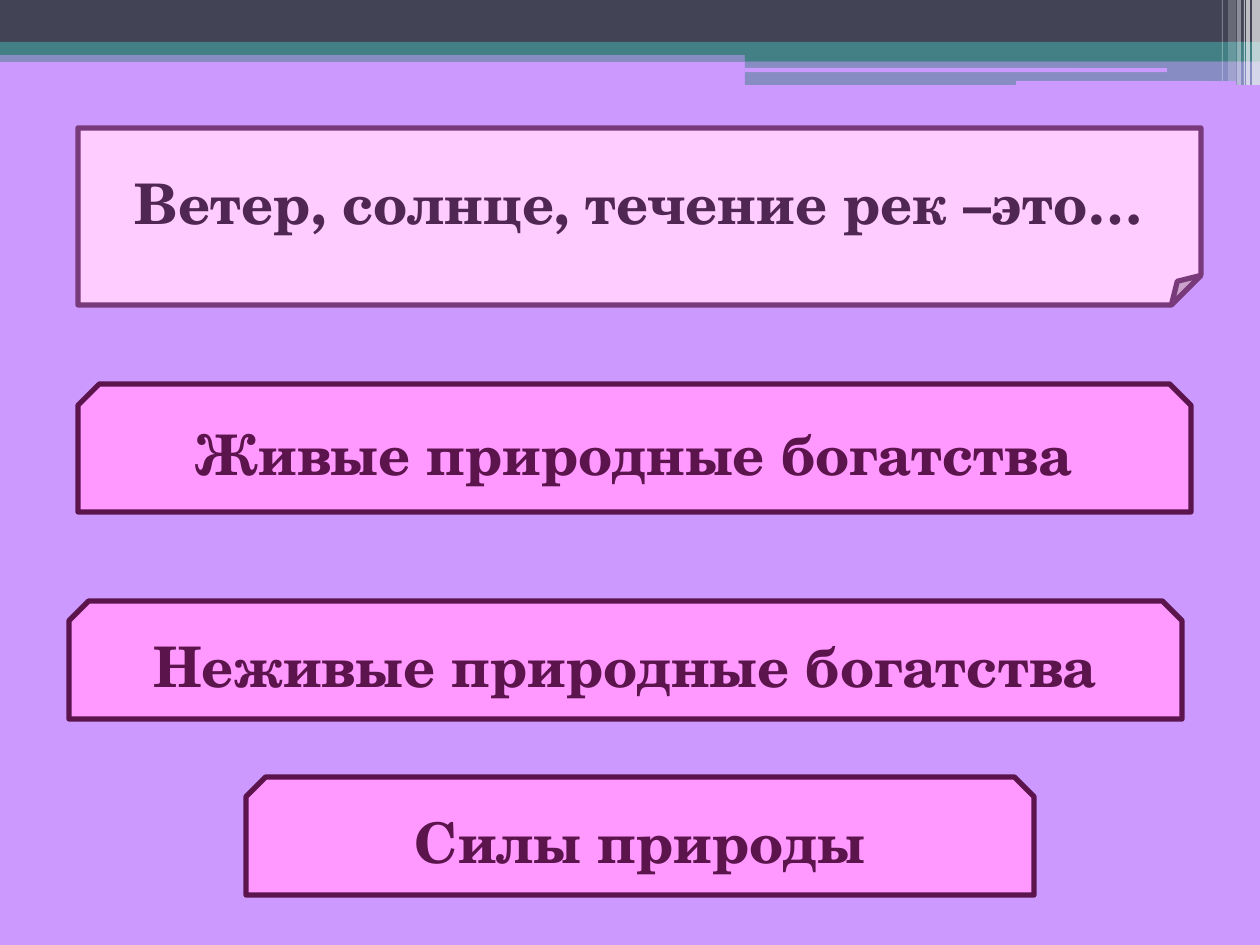
"""Builds a quiz slide with one question card and three answer cards."""
from lxml import etree
from pptx import Presentation, util as u
from pptx.dml.color import RGBColor
from pptx.enum import shapes, text
from pptx.oxml.ns import qn

HUES = {
    "page": "CC99FF", "slate": "424456", "teal": "438086", "white": "FFFFFF",
    "note": "FFCCFF", "edge": "783A7A", "ink": "502652",
    "pink": "FF99FF", "plum": "5C144D",
}
KIND = shapes.MSO_SHAPE


class Deck:
    """Holds the style and the current slide."""

    font, size, width = "TeX Gyre Schola", u.Pt(32), u.Pt(3)
    unit = u.Inches(10) / 1260

    def __init__(self):
        self.show = Presentation()
        self.show.slide_width = self.px(1260)
        self.show.slide_height = self.px(945)
        self.slide = self.show.slides.add_slide(self.show.slide_layouts[6])
        self.paint(self.slide.background.fill, "page")

    def px(self, count):
        return u.Emu(round(count * self.unit))

    def paint(self, fill, hue):
        fill.solid()
        fill.fore_color.rgb = RGBColor.from_string(HUES[hue])

    def band(self, box, hue, alpha=100, kind=KIND.RECTANGLE):
        shape = self.slide.shapes.add_shape(kind, *map(self.px, box))
        shape.shadow.inherit = False
        shape.line.fill.background()
        self.paint(shape.fill, hue)
        if alpha < 100:
            color = shape.fill._xPr.find(".//" + qn("a:srgbClr"))
            etree.SubElement(color, qn("a:alpha"), val=str(alpha * 1000))
        return shape

    def card(self, box, words, kind=KIND.SNIP_2_SAME_RECTANGLE,
             hue="pink", edge="plum", ink="plum"):
        shape = self.band(box, hue, kind=kind)
        self.paint(shape.line.fill, edge)
        shape.line.width = self.width
        frame = shape.text_frame
        frame.word_wrap = True
        frame.vertical_anchor = text.MSO_ANCHOR.MIDDLE
        para = frame.paragraphs[0]
        para.text = words
        para.alignment = text.PP_ALIGN.CENTER
        para.font.name, para.font.size, para.font.bold = self.font, self.size, True
        self.paint(para.font.fill, ink)


def main():
    deck = Deck()
    for box, hue, alpha in [
        ((0, 50, 1260, 12), "teal", 50),
        ((0, 0, 1260, 42), "slate", 100),
        ((0, 42, 1260, 13), "teal", 100),
        ((745, 49, 515, 12), "teal", 100),
        ((745, 61, 515, 24), "teal", 50),
    ]:
        deck.band(box, hue, alpha)
    for box in [(745, 68, 422, 4), (1016, 81, 220, 5)]:
        deck.band(box, "page", kind=KIND.ROUNDED_RECTANGLE)
    for left, wide, high, alpha in [
        (1252, 8, 85, 65), (1246, 4, 85, 65), (1244, 1, 85, 60),
        (1237, 4, 85, 40), (1228, 8, 81, 20), (1222, 1, 81, 30),
    ]:
        deck.band((left, 0, wide, high), "white", alpha)

    deck.card((78, 128, 1123, 177), "Ветер, солнце, течение рек –это…",
              KIND.FOLDED_CORNER, "note", "edge", "ink")
    for box, words in [
        ((78, 384, 1113, 128), "Живые природные богатства"),
        ((69, 601, 1113, 118), "Неживые природные богатства"),
        ((246, 777, 788, 118), "Силы природы"),
    ]:
        deck.card(box, words)
    deck.show.save("out.pptx")


if __name__ == "__main__":
    main()
